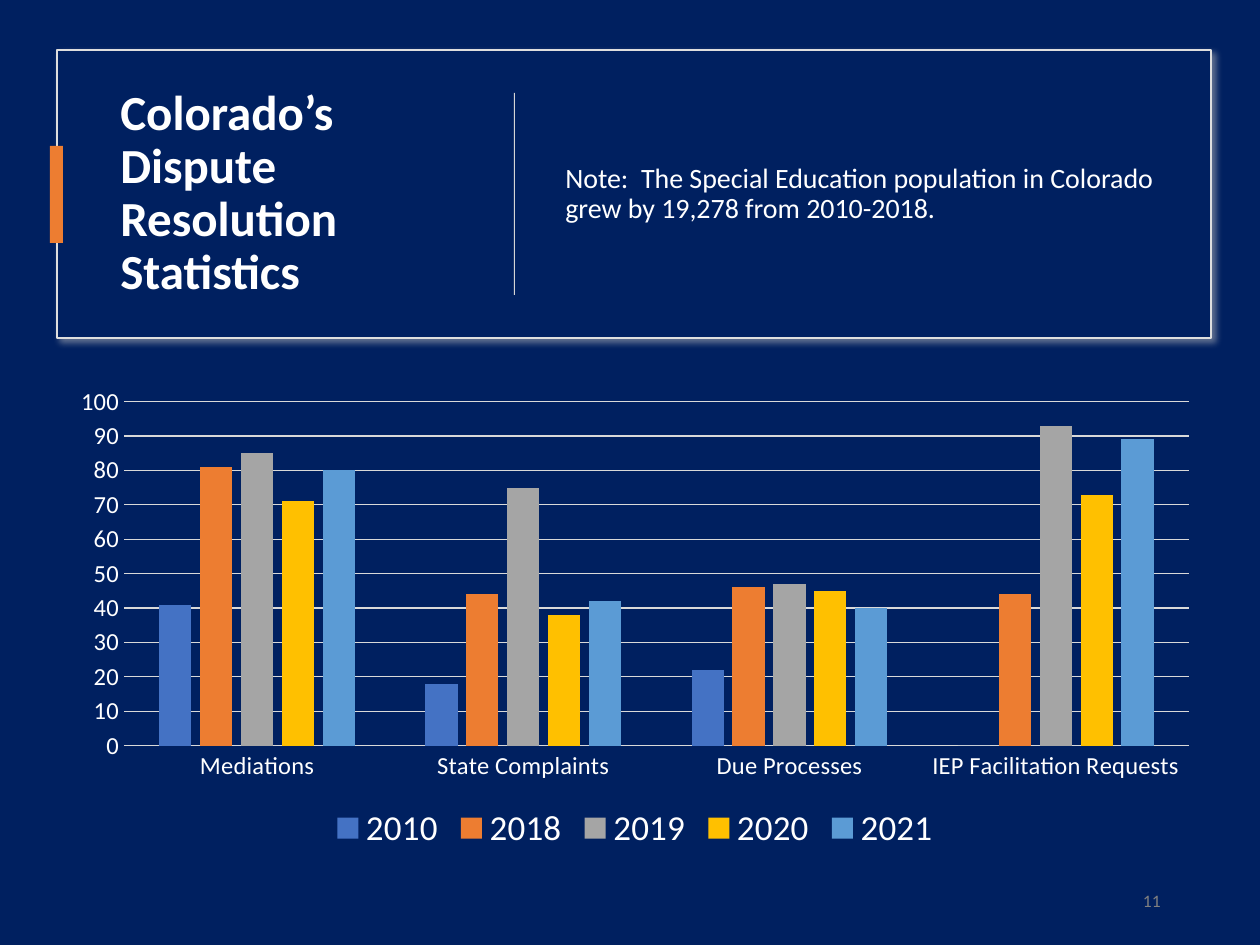
from dataclasses import dataclass
from typing import Optional

from lxml.etree import SubElement
from pptx import Presentation
from pptx.chart.data import CategoryChartData
from pptx.dml.color import RGBColor
from pptx.enum.chart import XL_CHART_TYPE, XL_LEGEND_POSITION, XL_TICK_MARK
from pptx.enum.shapes import MSO_SHAPE
from pptx.enum.text import MSO_ANCHOR, PP_ALIGN
from pptx.oxml.ns import qn
from pptx.util import Pt

PX = 914400 / 126
FONT = "Calibri"
NAVY = RGBColor(0x00, 0x20, 0x60)
WHITE = RGBColor(0xFF, 0xFF, 0xFF)
ORANGE = RGBColor(0xED, 0x7D, 0x31)
FRAME_LINE = RGBColor(0xDE, 0xDE, 0xDE)
DIVIDER = RGBColor(0xD5, 0xD5, 0xD5)
GRID = RGBColor(0xD9, 0xD9, 0xD9)
GRAY = RGBColor(0x80, 0x80, 0x80)
SHADOW = RGBColor(0xC5, 0xC3, 0xC3)


@dataclass
class Box:
    x: int
    y: int
    w: int
    h: int

    def emu(self) -> tuple:
        return tuple(round(v * PX) for v in (self.x, self.y, self.w, self.h))


@dataclass
class Label:
    box: Box
    text: str
    size: int
    color: RGBColor = WHITE
    bold: bool = False
    align: PP_ALIGN = PP_ALIGN.LEFT
    spacing: float = 1.0
    after: int = 0


@dataclass
class Year:
    name: str
    values: tuple
    color: RGBColor


CATEGORIES = ("Mediations", "State Complaints", "Due Processes",
              "IEP Facilitation Requests")
YEARS = (
    Year("2010", (41, 18, 22, 0), RGBColor(0x44, 0x72, 0xC4)),
    Year("2018", (81, 44, 46, 44), ORANGE),
    Year("2019", (85, 75, 47, 93), RGBColor(0xA5, 0xA5, 0xA5)),
    Year("2020", (71, 38, 45, 73), RGBColor(0xFF, 0xC0, 0x00)),
    Year("2021", (80, 42, 40, 89), RGBColor(0x5B, 0x9B, 0xD5)),
)
LABELS = (
    Label(Box(108, 81, 368, 227), "Colorado’s Dispute Resolution Statistics",
          28, bold=True, spacing=0.9),
    Label(Box(553, 81, 620, 227),
          "Note:  The Special Education population in Colorado grew by "
          "19,278 from 2010-2018.", 16, spacing=0.9, after=6),
    Label(Box(890, 876, 283, 50), "11", 10, GRAY, align=PP_ALIGN.RIGHT, after=6),
)


def add_rect(s, box: Box, fill: RGBColor, line: Optional[RGBColor] = None):
    sp = s.shapes.add_shape(MSO_SHAPE.RECTANGLE, *box.emu())
    sp.shadow.inherit = False
    sp.fill.solid()
    sp.fill.fore_color.rgb = fill
    if line is None:
        sp.line.fill.background()
    else:
        sp.line.color.rgb = line
        sp.line.width = Pt(1)
    return sp


def add_shadow(sp) -> None:
    effects = sp._element.spPr.find(qn("a:effectLst"))
    shadow = SubElement(effects, qn("a:outerShdw"), blurRad=str(Pt(4)),
                        dist=str(Pt(3)), dir=str(45 * 60000),
                        algn="tl", rotWithShape="0")
    color = SubElement(shadow, qn("a:srgbClr"), val=str(SHADOW))
    SubElement(color, qn("a:alpha"), val="50000")


def style_font(font, size: int, color: RGBColor, bold: bool = False) -> None:
    font.name = FONT
    font.size = Pt(size)
    font.bold = bold
    font.color.rgb = color


def add_label(s, label: Label) -> None:
    tf = s.shapes.add_textbox(*label.box.emu()).text_frame
    tf.word_wrap = True
    tf.vertical_anchor = MSO_ANCHOR.MIDDLE
    p = tf.paragraphs[0]
    p.alignment = label.align
    p.line_spacing = label.spacing
    p.space_after = Pt(label.after)
    r = p.add_run()
    r.text = label.text
    style_font(r.font, label.size, label.color, label.bold)


def style_axis(axis) -> None:
    axis.major_tick_mark = XL_TICK_MARK.NONE
    axis.minor_tick_mark = XL_TICK_MARK.NONE
    style_font(axis.tick_labels.font, 14, WHITE)


def style_line(line) -> None:
    line.color.rgb = GRID
    line.width = Pt(0.75)


def add_year_chart(s, box: Box) -> None:
    data = CategoryChartData()
    data.categories = CATEGORIES
    for year in YEARS:
        data.add_series(year.name, year.values)
    chart = s.shapes.add_chart(
        XL_CHART_TYPE.COLUMN_CLUSTERED, *box.emu(), data).chart
    chart.has_title = False
    chart.font.name = FONT
    chart.font.size = Pt(10)

    plot = chart.plots[0]
    plot.vary_by_categories = False
    plot.gap_width = 219
    plot.overlap = -27
    for series, year in zip(plot.series, YEARS):
        series.format.fill.solid()
        series.format.fill.fore_color.rgb = year.color

    style_axis(chart.category_axis)
    style_line(chart.category_axis.format.line)
    values = chart.value_axis
    style_axis(values)
    values.minimum_scale, values.maximum_scale, values.major_unit = 0, 100, 10
    values.format.line.fill.background()
    values.has_major_gridlines = True
    style_line(values.major_gridlines.format.line)

    chart.has_legend = True
    chart.legend.position = XL_LEGEND_POSITION.BOTTOM
    chart.legend.include_in_layout = False
    style_font(chart.legend.font, 20, WHITE)


def main() -> None:
    prs = Presentation()
    prs.slide_width, prs.slide_height = Box(0, 0, 1260, 945).emu()[2:]
    s = prs.slides.add_slide(prs.slide_layouts[6])
    s.background.fill.solid()
    s.background.fill.fore_color.rgb = NAVY

    # Header frame, accent bar and divider
    add_shadow(add_rect(s, Box(57, 50, 1154, 288), NAVY, FRAME_LINE))
    add_rect(s, Box(50, 146, 13, 97), ORANGE)
    add_rect(s, Box(514, 93, 1, 202), DIVIDER)

    # Title, note and slide number
    for label in LABELS:
        add_label(s, label)

    # Columns by year
    add_year_chart(s, Box(58, 377, 1154, 480))
    prs.save("out.pptx")


if __name__ == "__main__":
    main()
